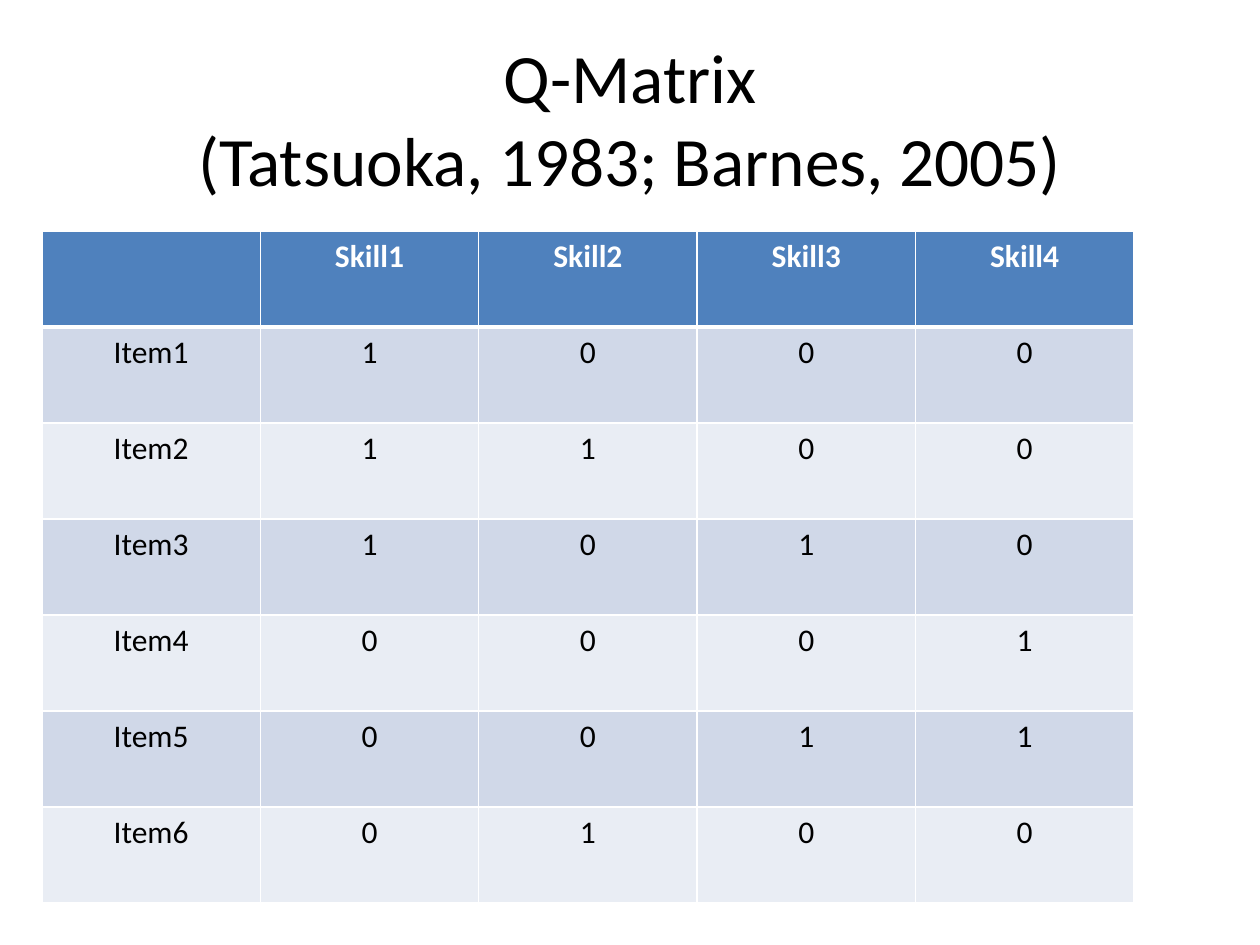
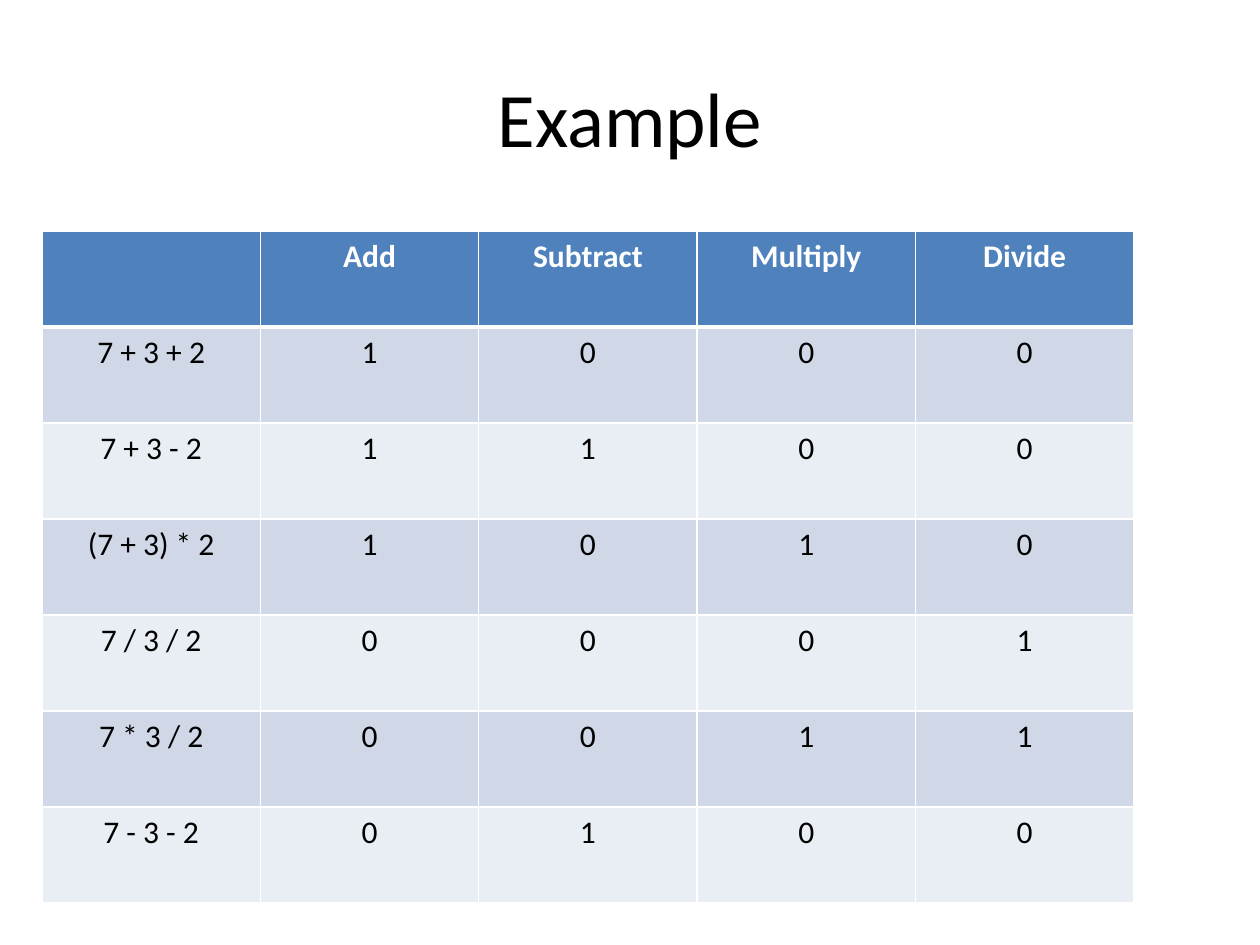
import pptx
import pptx.dml.color
import pptx.enum.text
import pptx.oxml.ns
import pptx.util
from lxml import etree

SCALE = 914400 / 126
FONT = "Calibri"
BLACK, WHITE = "000000", "FFFFFF"
HEAD = "4F81BD"
BANDS = ("D0D8E8", "E9EDF4")
CENTER = pptx.enum.text.PP_ALIGN.CENTER

TITLE_BOX = (63, 38, 1134, 158)
TABLE_BOX = (42, 231, 1092, 672)

MATRIX = ((1, 0, 0, 0), (1, 1, 0, 0), (1, 0, 1, 0),
          (0, 0, 0, 1), (0, 0, 1, 1), (0, 1, 0, 0))
SKILLS = [f"Skill{n}" for n in range(1, 5)]
ITEMS = [f"Item{n}" for n in range(1, 7)]
SIGNS = ["Add", "Subtract", "Multiply", "Divide"]
SUMS = ["7 + 3 + 2", "7 + 3 - 2", "(7 + 3) * 2",
        "7 / 3 / 2", "7 * 3 / 2", "7 - 3 - 2"]


def px(size):
    return pptx.util.Emu(round(size * SCALE))


def color(code):
    return pptx.dml.color.RGBColor.from_string(code)


def add_run(para, text, size, code, bold=False):
    run = para.add_run()
    run.text = text
    run.font.name = FONT
    run.font.size = pptx.util.Pt(size)
    run.font.bold = bold
    run.font.color.rgb = color(code)


def add_title(slide, lines, size):
    box = slide.shapes.add_textbox(*map(px, TITLE_BOX))
    frame = box.text_frame
    frame.word_wrap = True
    frame.vertical_anchor = pptx.enum.text.MSO_ANCHOR.MIDDLE
    para = frame.paragraphs[0]
    para.alignment = CENTER
    for index, line in enumerate(lines):
        if index:
            para.add_line_break()
        add_run(para, line, size, BLACK)


def add_border(cell, side, width):
    """Draw one white edge; call before the cell gets its fill."""
    qn = pptx.oxml.ns.qn
    props = cell._tc.get_or_add_tcPr()
    line = etree.SubElement(props, qn(f"a:ln{side}"),
                            w=str(pptx.util.Pt(width)))
    fill = etree.SubElement(line, qn("a:solidFill"))
    etree.SubElement(fill, qn("a:srgbClr"), val=WHITE)


def fill_cell(cell, text, row):
    top, bottom = (3 if row == 1 else 1), (3 if row == 0 else 1)
    for side, width in zip("LRTB", (1, 1, top, bottom)):
        add_border(cell, side, width)
    cell.fill.solid()
    cell.fill.fore_color.rgb = color(BANDS[(row - 1) % 2] if row else HEAD)
    para = cell.text_frame.paragraphs[0]
    para.alignment = CENTER
    if text:
        add_run(para, text, 18, BLACK if row else WHITE, bold=row == 0)


def add_matrix(slide, heads, labels):
    rows = [["", *heads]]
    rows += [[label, *map(str, bits)] for label, bits in zip(labels, MATRIX)]
    left, top, width, height = TABLE_BOX
    count = len(rows[0])
    table = slide.shapes.add_table(len(rows), count, px(left), px(top),
                                   px(width), px(height)).table
    for column in table.columns:
        column.width = px(width / count)
    for r, row in enumerate(rows):
        table.rows[r].height = px(height / len(rows))
        for c, text in enumerate(row):
            fill_cell(table.cell(r, c), text, r)


def add_slide(deck, lines, size, heads, labels):
    slide = deck.slides.add_slide(deck.slide_layouts[6])
    slide.background.fill.solid()
    slide.background.fill.fore_color.rgb = color(WHITE)
    add_title(slide, lines, size)
    add_matrix(slide, heads, labels)


def main():
    deck = pptx.Presentation()
    deck.slide_width, deck.slide_height = px(1260), px(945)
    add_slide(deck, ["Q-Matrix", "(Tatsuoka, 1983; Barnes, 2005)"], 39.6,
              SKILLS, ITEMS)
    add_slide(deck, ["Example"], 44, SIGNS, SUMS)
    deck.save("out.pptx")


if __name__ == "__main__":
    main()
